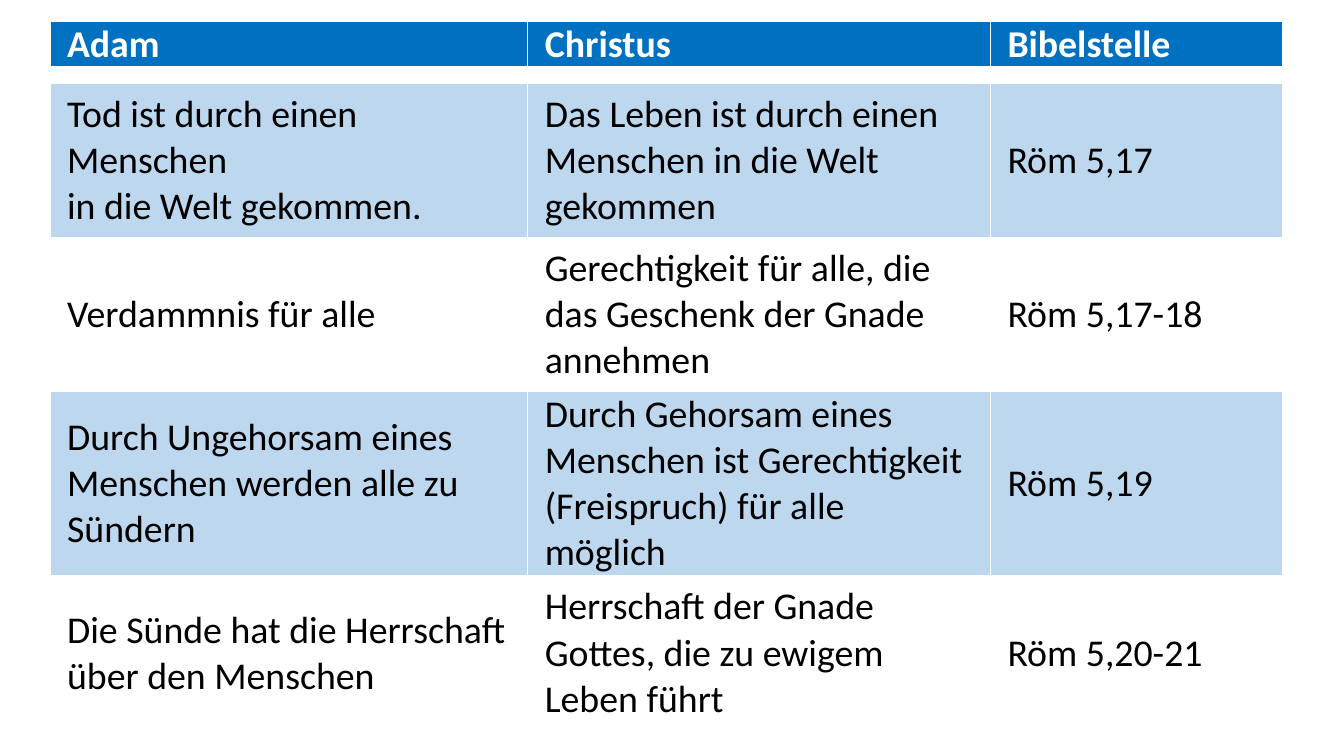
from lxml import etree
from pptx import Presentation
from pptx.dml.color import RGBColor
from pptx.enum.text import MSO_ANCHOR
from pptx.oxml.ns import qn
from pptx.util import Cm, Pt

TOP = MSO_ANCHOR.TOP
MIDDLE = MSO_ANCHOR.MIDDLE

COLORS = {
    "header": "0070C0",
    "band": "BDD7EE",
    "white": "FFFFFF",
    "black": "000000",
}
COLUMN_WIDTHS = [12.04, 11.66, 7.37]
HEADER_HEIGHT = 1.14
GAP_HEIGHT = 0.38
HEADINGS = ["Adam", "Christus", "Bibelstelle"]
COMPARISONS = [
    (3.89, ["Tod ist durch einen Menschen\nin die Welt gekommen.",
            "Das Leben ist durch einen\nMenschen in die Welt gekommen",
            "Röm 5,17"]),
    (3.89, ["Verdammnis für alle",
            "Gerechtigkeit für alle, die das Geschenk der Gnade annehmen",
            "Röm 5,17-18"]),
    (4.6, ["Durch Ungehorsam eines\nMenschen werden alle zu Sündern",
           "Durch Gehorsam eines Menschen ist Gerechtigkeit (Freispruch) für alle möglich",
           "Röm 5,19"]),
    (3.89, ["Die Sünde hat die Herrschaft\nüber den Menschen",
            "Herrschaft der Gnade Gottes, die zu ewigem Leben führt",
            "Röm 5,20-21"]),
]


class SlideBuilder:
    font_format = {"name": "Calibri", "size": Pt(27)}
    cell_format = {"margin_left": Cm(0.43), "margin_right": Cm(0.43),
                   "margin_top": 0, "margin_bottom": 0}
    table_format = {"first_row": False, "horz_banding": False}

    def __init__(self, deck):
        self.slide = deck.slides.add_slide(deck.slide_layouts[6])

    def apply(self, target, formats):
        for name, value in formats.items():
            setattr(target, name, value)

    def add_table(self, left, top, widths, heights):
        frame = self.slide.shapes.add_table(
            len(heights), len(widths), Cm(left), Cm(top),
            Cm(sum(widths)), Cm(sum(heights)))
        table = frame.table
        self.apply(table, self.table_format)
        for column, width in zip(table.columns, widths):
            column.width = Cm(width)
        for row, height in zip(table.rows, heights):
            row.height = Cm(height)
        return table

    def add_borders(self, cell, bottom_width):
        properties = cell._tc.get_or_add_tcPr()
        for side, width in (("L", 1), ("R", 1), ("T", 1), ("B", bottom_width)):
            line = etree.SubElement(properties, qn(f"a:ln{side}"), w=str(Pt(width)))
            fill = etree.SubElement(line, qn("a:solidFill"))
            etree.SubElement(fill, qn("a:srgbClr"), val=COLORS["white"])

    def fill_row(self, row, texts, fill, color, bold=False, anchor=MIDDLE, bottom_width=1):
        for cell, text in zip(row.cells, texts):
            self.apply(cell, self.cell_format | {"vertical_anchor": anchor})
            self.add_borders(cell, bottom_width)
            cell.fill.solid()
            cell.fill.fore_color.rgb = RGBColor.from_string(COLORS[fill])
            cell.text = text
            for para in cell.text_frame.paragraphs:
                for span in para.runs:
                    self.apply(span.font, self.font_format | {"bold": bold})
                    span.font.color.rgb = RGBColor.from_string(COLORS[color])

    def clear_row(self, row):
        self.fill_row(row, [""] * len(row.cells), "white", "black")
        for cell in row.cells:
            para = cell.text_frame.paragraphs[0]
            etree.SubElement(para._p, qn("a:endParaRPr"), sz="500")


def main():
    deck = Presentation()
    deck.slide_width = Cm(33.87)
    deck.slide_height = Cm(19.05)
    builder = SlideBuilder(deck)
    heights = [HEADER_HEIGHT, GAP_HEIGHT] + [height for height, _ in COMPARISONS]
    table = builder.add_table(1.26, 0.55, COLUMN_WIDTHS, heights)
    header, gap, *body = table.rows
    builder.fill_row(header, HEADINGS, "header", "white", True, TOP, 3)
    builder.clear_row(gap)
    for index, (row, (_, texts)) in enumerate(zip(body, COMPARISONS)):
        builder.fill_row(row, texts, "white" if index % 2 else "band", "black")
    deck.save("out.pptx")


if __name__ == "__main__":
    main()
